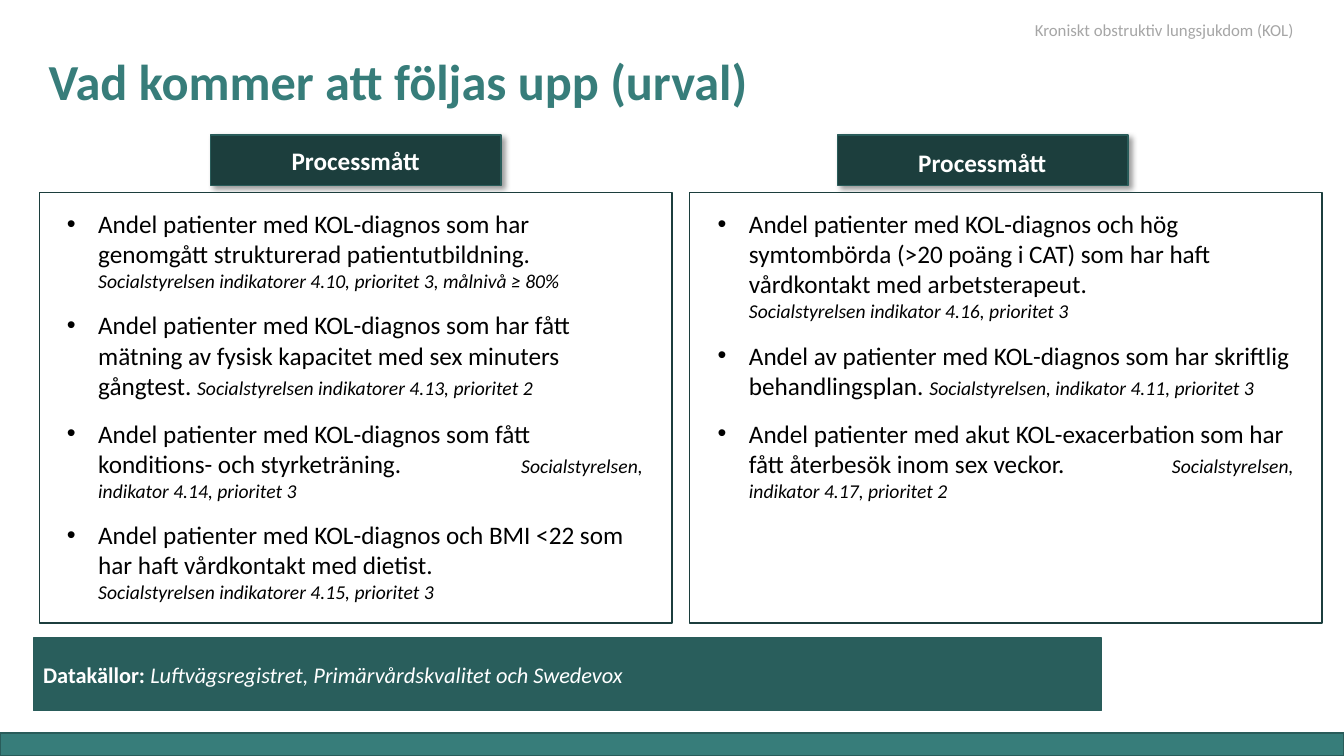
import pptx
import pptx.dml.color
import pptx.enum.shapes
import pptx.enum.text
import pptx.oxml.ns
import pptx.util
from lxml import etree

Cm = pptx.util.Cm
Pt = pptx.util.Pt
RGBColor = pptx.dml.color.RGBColor
Align = pptx.enum.text.PP_ALIGN
Anchor = pptx.enum.text.MSO_ANCHOR
qn = pptx.oxml.ns.qn

FONT = "Calibri"
TEAL = RGBColor(0x37, 0x7D, 0x7A)
MID_TEAL = RGBColor(0x29, 0x5E, 0x5C)
EDGE_TEAL = RGBColor(0x29, 0x5C, 0x5A)
DARK_TEAL = RGBColor(0x1C, 0x3E, 0x3D)
GREY = RGBColor(0xA6, 0xA6, 0xA6)
BLACK = RGBColor(0, 0, 0)
WHITE = RGBColor(0xFF, 0xFF, 0xFF)

# Each measure: description, separator ("\v" is a line break), source
LEFT_MEASURES = [
    ("Andel patienter med KOL-diagnos som har genomgått strukturerad patientutbildning.",
     "\v", "Socialstyrelsen indikatorer 4.10, prioritet 3, målnivå ≥ 80%"),
    ("Andel patienter med KOL-diagnos som har fått mätning av fysisk kapacitet "
     "med sex minuters gångtest.",
     " ", "Socialstyrelsen indikatorer 4.13, prioritet 2"),
    ("Andel patienter med KOL-diagnos som fått konditions- och styrketräning.",
     "\t", "Socialstyrelsen, indikator 4.14, prioritet 3"),
    ("Andel patienter med KOL-diagnos och BMI <22 som har haft vårdkontakt med dietist.",
     "\v", "Socialstyrelsen indikatorer 4.15, prioritet 3"),
]
RIGHT_MEASURES = [
    ("Andel patienter med KOL-diagnos och hög symtombörda (>20 poäng i CAT) "
     "som har haft vårdkontakt med arbetsterapeut.",
     "\v", "Socialstyrelsen indikator 4.16, prioritet 3"),
    ("Andel av patienter med KOL-diagnos som har skriftlig behandlingsplan.",
     " ", "Socialstyrelsen, indikator 4.11, prioritet 3"),
    ("Andel patienter med akut KOL-exacerbation som har fått återbesök inom sex veckor.",
     "\t", "Socialstyrelsen, indikator 4.17, prioritet 2"),
]


def format_font(font, size, color, bold=False, italic=False):
    font.name = FONT
    font.size = Pt(size)
    font.color.rgb = color
    font.bold = bold
    font.italic = italic


def place(shape, box):
    shape.left, shape.top, shape.width, shape.height = (Cm(value) for value in box)


def add_rectangle(slide, box, fill, line):
    shape = slide.shapes.add_shape(
        pptx.enum.shapes.MSO_SHAPE.RECTANGLE, *(Cm(value) for value in box))
    shape.shadow.inherit = False
    shape.fill.solid()
    shape.fill.fore_color.rgb = fill
    shape.line.color.rgb = line
    shape.line.width = Pt(1)
    return shape


def add_soft_shadow(shape):
    effects = shape._element.spPr.find(qn("a:effectLst"))
    shadow = etree.SubElement(effects, qn("a:outerShdw"), blurRad=str(Pt(4)),
                              dist=str(Pt(3)), dir="2700000", algn="tl")
    color = etree.SubElement(shadow, qn("a:srgbClr"), val="000000")
    etree.SubElement(color, qn("a:alpha"), val="40000")


def add_text(slide, box, text, size, color, bold=False,
             align=Align.LEFT, anchor=Anchor.TOP):
    shape = slide.shapes.add_textbox(*(Cm(value) for value in box))
    frame = shape.text_frame
    frame.word_wrap = True
    frame.vertical_anchor = anchor
    frame.text = text
    paragraph = frame.paragraphs[0]
    paragraph.alignment = align
    format_font(paragraph.runs[0].font, size, color, bold)


def fill_title(title, text):
    place(title, (0.97, 1.24, 25.4, 1.7))
    frame = title.text_frame
    frame.auto_size = pptx.enum.text.MSO_AUTO_SIZE.NONE
    frame.vertical_anchor = Anchor.BOTTOM
    frame.text = text
    paragraph = frame.paragraphs[0]
    paragraph.alignment = Align.LEFT
    paragraph.line_spacing = 0.9
    format_font(paragraph.runs[0].font, 36, TEAL, bold=True)


def format_list_item(paragraph):
    """Set a hanging bullet and a tab stop for sources placed at the right."""
    properties = paragraph._element.get_or_add_pPr()
    properties.set("marL", str(Cm(0.79)))
    properties.set("indent", str(-Cm(0.79)))
    etree.SubElement(properties, qn("a:buFont"), typeface="Arial")
    etree.SubElement(properties, qn("a:buChar"), char="•")
    tabs = etree.SubElement(properties, qn("a:tabLst"))
    etree.SubElement(tabs, qn("a:tab"), pos=str(Cm(11.45)), algn="l")


def fill_measures(body, box, measures):
    place(body, box)
    frame = body.text_frame
    frame.auto_size = pptx.enum.text.MSO_AUTO_SIZE.NONE
    for index, (description, separator, source) in enumerate(measures):
        paragraph = frame.add_paragraph() if index else frame.paragraphs[0]
        format_list_item(paragraph)
        paragraph.space_before = Pt(12.5 if index else 0)
        breaks = separator == "\v"
        paragraph.text = description if breaks else description + separator
        format_font(paragraph.runs[0].font, 18, BLACK)
        if breaks:
            paragraph.add_line_break()
        run = paragraph.add_run()
        run.text = source
        format_font(run.font, 14, BLACK, italic=True)


def add_data_sources(slide):
    shape = add_rectangle(slide, (0.84, 16.08, 26.92, 1.83), MID_TEAL, EDGE_TEAL)
    frame = shape.text_frame
    frame.vertical_anchor = Anchor.MIDDLE
    frame.text = "Datakällor: "
    paragraph = frame.paragraphs[0]
    paragraph.alignment = Align.LEFT
    format_font(paragraph.runs[0].font, 16, WHITE, bold=True)
    run = paragraph.add_run()
    run.text = "Luftvägsregistret, Primärvårdskvalitet och Swedevox"
    format_font(run.font, 16, WHITE, italic=True)


def add_column(slide, body, frame_left, banner_left, label_box, list_box, measures):
    banner = add_rectangle(slide, (banner_left, 3.4, 7.32, 1.27), DARK_TEAL, EDGE_TEAL)
    add_soft_shadow(banner)
    add_text(slide, label_box, "Processmått", 18, WHITE, bold=True,
             align=Align.CENTER, anchor=Anchor.MIDDLE)
    add_rectangle(slide, (frame_left, 4.85, 15.95, 10.85), WHITE, DARK_TEAL)
    fill_measures(body, list_box, measures)
    slide.shapes._spTree.append(body._element)  # in front of the filled frame


def main():
    presentation = pptx.Presentation()
    presentation.slide_width = Cm(33.87)
    presentation.slide_height = Cm(19.05)
    slide = presentation.slides.add_slide(presentation.slide_layouts[3])
    title, left_body, right_body = slide.placeholders
    add_rectangle(slide, (0, 18.47, 33.87, 0.58), TEAL, EDGE_TEAL)
    fill_title(title, "Vad kommer att följas upp (urval)")
    add_data_sources(slide)
    add_column(slide, left_body, 0.99, 5.31, (0.99, 3.35, 15.95, 1.4),
               (1.43, 5.12, 15.04, 10.49), LEFT_MEASURES)
    add_column(slide, right_body, 17.37, 21.11, (17.2, 3.25, 15.11, 1.68),
               (17.83, 5.12, 15.04, 7.9), RIGHT_MEASURES)
    add_text(slide, (25.83, 0.38, 7.09, 0.76), "Kroniskt obstruktiv lungsjukdom (KOL)",
             12, GREY)
    presentation.save("out.pptx")


if __name__ == "__main__":
    main()
